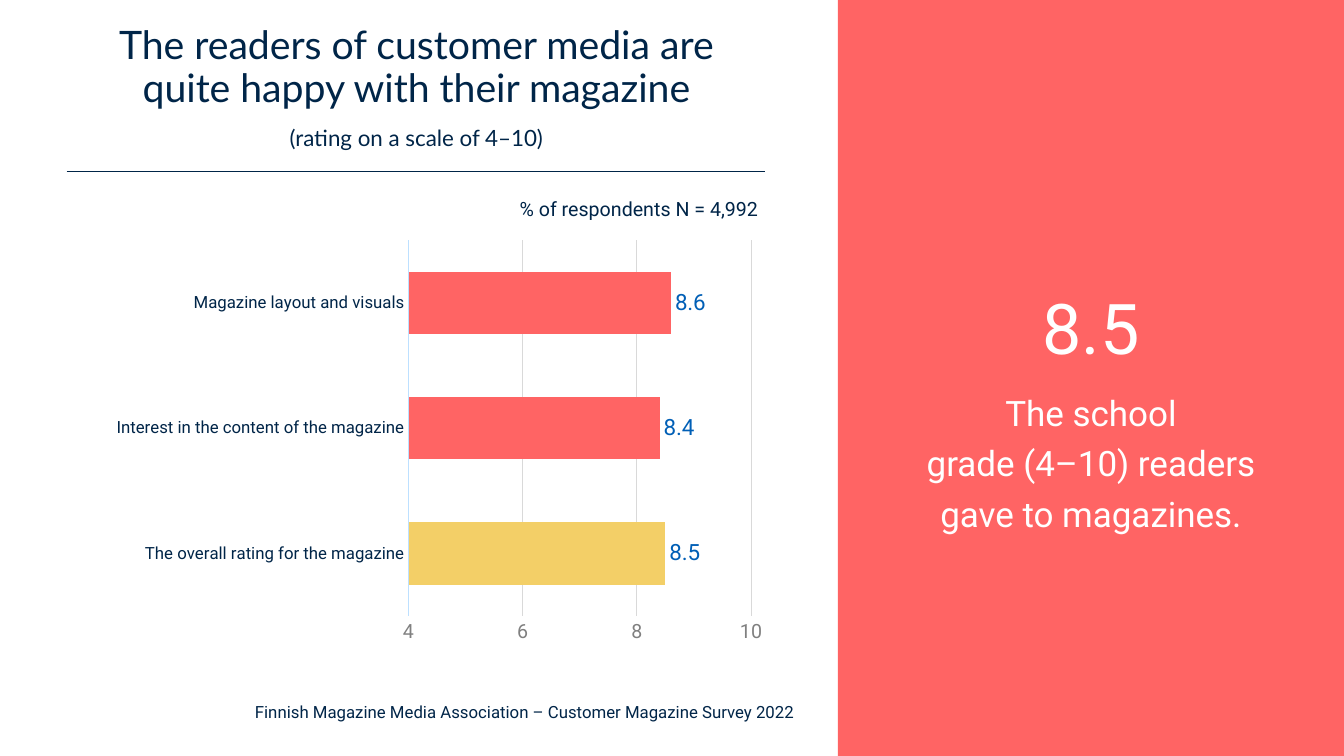
from lxml import etree
from pptx import Presentation
from pptx.chart.data import CategoryChartData
from pptx.dml.color import RGBColor
from pptx.enum.chart import XL_CHART_TYPE, XL_LABEL_POSITION, XL_TICK_LABEL_POSITION, XL_TICK_MARK
from pptx.enum.shapes import MSO_CONNECTOR, MSO_SHAPE
from pptx.enum.text import MSO_ANCHOR, PP_ALIGN
from pptx.oxml.ns import qn
from pptx.util import Inches, Pt

CENTER, RIGHT = PP_ALIGN.CENTER, PP_ALIGN.RIGHT
TOP, MIDDLE = MSO_ANCHOR.TOP, MSO_ANCHOR.MIDDLE
NO_TICK = XL_TICK_MARK.NONE
NEXT_TO_AXIS = XL_TICK_LABEL_POSITION.NEXT_TO_AXIS
BAR_CLUSTERED = XL_CHART_TYPE.BAR_CLUSTERED
OUTSIDE_END = XL_LABEL_POSITION.OUTSIDE_END

COLORS = {
    "navy": "002548",
    "coral": "FF6464",
    "yellow": "F3CF67",
    "blue": "005FB6",
    "pale_blue": "BDE0FF",
    "gray": "808080",
    "grid": "D9D9D9",
    "white": "FFFFFF",
}


def set_font(font, name, size, color):
    font.name = name
    font.size = Pt(size)
    font.color.rgb = RGBColor.from_string(COLORS[color])


def add_text(page, area, paragraphs, name, color, align, anchor, spacing):
    box = page.shapes.add_textbox(*[Inches(length) for length in area])
    frame = box.text_frame
    frame.word_wrap = True
    frame.vertical_anchor = anchor
    for index, (lines, size, before) in enumerate(paragraphs):
        para = frame.paragraphs[0] if index == 0 else frame.add_paragraph()
        para.alignment = align
        para.line_spacing = spacing
        para.space_before = Pt(before)
        for number, line in enumerate(lines):
            if number:
                para.add_line_break()
            span = para.add_run()
            span.text = line
            set_font(span.font, name, size, color)
    return box


deck = Presentation()
deck.slide_width = Inches(13.33)
deck.slide_height = Inches(7.5)
page = deck.slides.add_slide(deck.slide_layouts[6])

panel = page.shapes.add_shape(
    MSO_SHAPE.RECTANGLE, Inches(8.31), Inches(0), Inches(5.02), Inches(7.5))
panel.shadow.inherit = False
panel.fill.solid()
panel.fill.fore_color.rgb = RGBColor.from_string(COLORS["coral"])
panel.line.fill.background()

rule = page.shapes.add_connector(
    MSO_CONNECTOR.STRAIGHT, Inches(0.66), Inches(1.7), Inches(7.59), Inches(1.7))
rule.line.color.rgb = RGBColor.from_string(COLORS["navy"])
rule.line.width = Pt(1)
etree.SubElement(rule._element.spPr, qn("a:effectLst"))

source = add_text(
    page, (2.1, 6.99, 6.21, 0.16),
    [(["Finnish Magazine Media Association – Customer Magazine Survey 2022"], 12, 0)],
    "Roboto", "navy", CENTER, MIDDLE, 0.9)
source.text_frame.margin_top = source.text_frame.margin_bottom = Inches(0)

add_text(
    page, (0.66, 0.06, 6.94, 1.64),
    [(["The readers of customer media are quite happy with their magazine"], 28, 0),
     (["(rating on a scale of 4–10)"], 16, 12)],
    "Lato", "navy", CENTER, MIDDLE, 0.9)

add_text(
    page, (8.82, 1.7, 4, 4.56),
    [(["8.5"], 50, 0),
     (["The school", "grade (4–10) readers gave to magazines."], 25, 10)],
    "Roboto", "white", CENTER, MIDDLE, 1.2)

add_text(
    page, (3.44, 1.9, 4.18, 0.34),
    [(["% of respondents N = 4,992"], 14, 0)],
    "Roboto", "navy", RIGHT, TOP, 1.0)

bars_from_bottom = [
    ("The overall rating for the magazine", 8.5, "yellow"),
    ("Interest in the content of the magazine", 8.4, "coral"),
    ("Magazine layout and visuals", 8.6, "coral"),
]
ratings = CategoryChartData()
ratings.categories = [name for name, rating, color in bars_from_bottom]
ratings.add_series("Series 1", [rating for name, rating, color in bars_from_bottom])
chart = page.shapes.add_chart(
    BAR_CLUSTERED, Inches(0), Inches(2.07), Inches(7.9), Inches(4.84), ratings).chart
chart.has_legend = False
chart.has_title = False
set_font(chart.font, "Roboto", 10, "navy")

category_axis = chart.category_axis
category_axis.format.line.color.rgb = RGBColor.from_string(COLORS["pale_blue"])
category_axis.format.line.width = Pt(0.75)
set_font(category_axis.tick_labels.font, "Roboto", 12, "navy")

value_axis = chart.value_axis
value_axis.minimum_scale = 4
value_axis.maximum_scale = 10
value_axis.major_unit = 2
value_axis.has_major_gridlines = True
value_axis.major_gridlines.format.line.color.rgb = RGBColor.from_string(COLORS["grid"])
value_axis.major_gridlines.format.line.width = Pt(0.75)
value_axis.format.line.fill.background()
set_font(value_axis.tick_labels.font, "Roboto", 14, "gray")

for axis in (category_axis, value_axis):
    axis.major_tick_mark = NO_TICK
    axis.minor_tick_mark = NO_TICK
    axis.tick_label_position = NEXT_TO_AXIS

plot = chart.plots[0]
plot.gap_width = 100
plot.vary_by_categories = False
series = plot.series[0]
for index, (name, rating, color) in enumerate(bars_from_bottom):
    fill = series.points[index].format.fill
    fill.solid()
    fill.fore_color.rgb = RGBColor.from_string(COLORS[color])

labels = series.data_labels
labels.show_value = True
labels.position = OUTSIDE_END
labels.number_format = "#,##0.0"
labels.number_format_is_linked = False
set_font(labels.font, "Roboto", 16, "blue")

plot_area = chart._chartSpace.chart.plotArea
for old_layout in plot_area.findall(qn("c:layout")):
    plot_area.remove(old_layout)
layout = etree.Element(qn("c:layout"))
manual = etree.SubElement(layout, qn("c:manualLayout"))
for tag, value in [
    ("layoutTarget", "inner"), ("xMode", "edge"), ("yMode", "edge"),
    ("x", "0.513"), ("y", "0.065"), ("w", "0.43"), ("h", "0.77"),
]:
    etree.SubElement(manual, qn(f"c:{tag}")).set("val", value)
plot_area.insert(0, layout)

deck.save("out.pptx")
